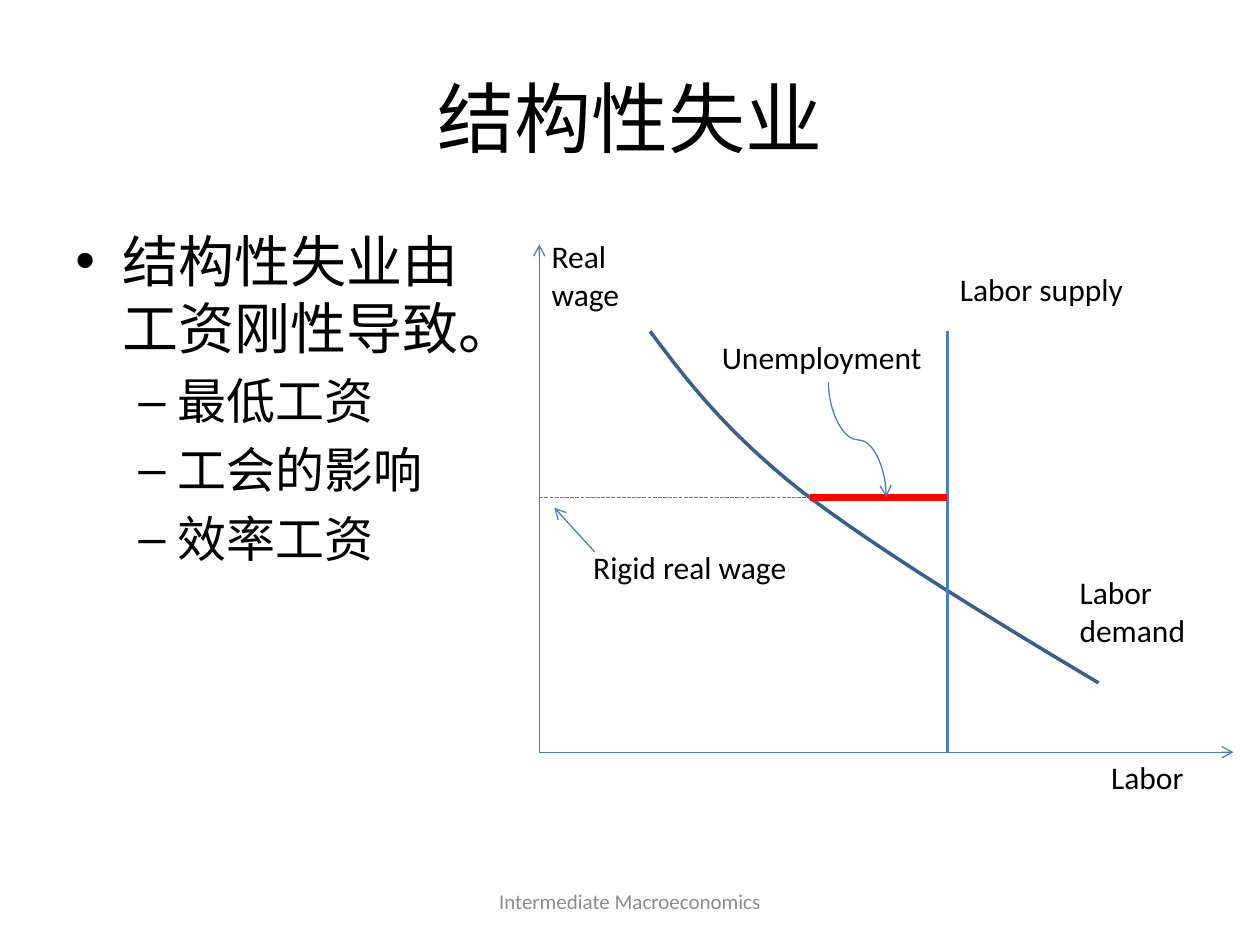
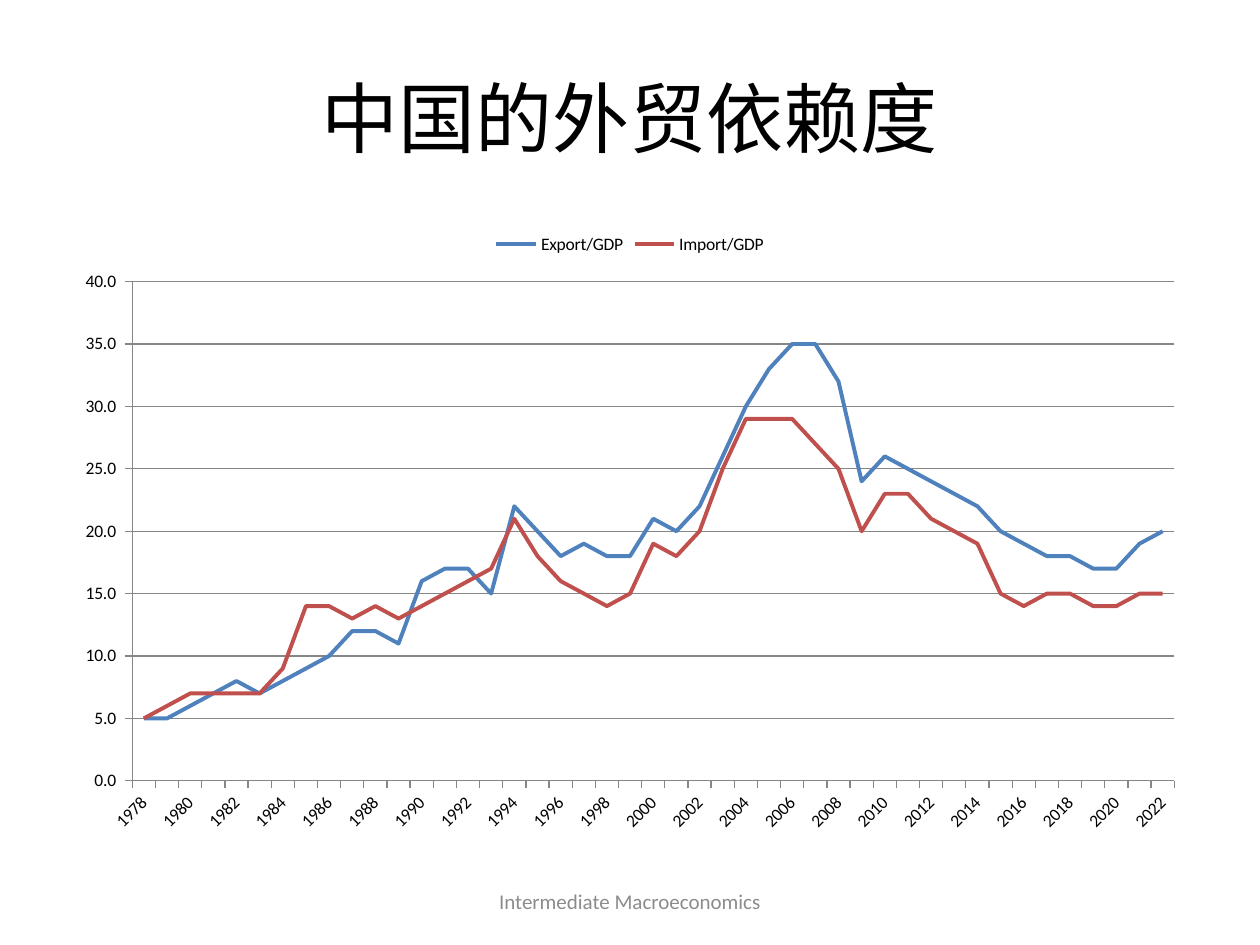
from dataclasses import dataclass

from lxml import etree
from pptx import Presentation
from pptx import util as u
from pptx.chart.data import CategoryChartData
from pptx.dml.color import RGBColor
from pptx.enum import chart as charts
from pptx.enum import dml, shapes, text
from pptx.oxml.ns import qn

PX = 9144  # EMU in one px, 100 px to the inch
FONT = "Calibri"
COLORS = {
    "text": "000000",
    "footer": "8C8C8C",
    "axis": "4B7EBC",
    "demand": "3A5F8C",
    "unemployment": "FF0000",
    "export": "4F81BD",
    "import": "C0504D",
    "grid": "868686",
}

Point = tuple[int, int]
Box = tuple[int, int, int, int]

TITLE_BOX: Box = (50, 30, 900, 125)
FOOTER_BOX: Box = (342, 695, 316, 40)
FOOTER = "Intermediate Macroeconomics"


@dataclass(frozen=True)
class Bullet:
    words: str
    mark: str
    size: int
    margin: int
    hanging: int
    level: int = 0


@dataclass(frozen=True)
class Stroke:
    start: Point
    end: Point
    color: str = "axis"
    width: float = 0.75
    arrow: bool = False
    dashed: bool = False
    rotation: int = 0
    kind: shapes.MSO_CONNECTOR = shapes.MSO_CONNECTOR.STRAIGHT


@dataclass(frozen=True)
class Label:
    words: str
    box: Box


CAUSES = [Bullet("结构性失业由工资刚性导致。", "•", 32, 37, 37)] + [
    Bullet(cause, "–", 28, 81, 31, level=1)
    for cause in ("最低工资", "工会的影响", "效率工资")
]

# Corners and levels of the labor market diagram
ORIGIN: Point = (428, 597)
SUPPLY_X, SUPPLY_TOP = 752, 263
RIGID_WAGE_Y = 395

DEMAND_START: Point = (516, 263)
DEMAND_CURVES = [
    ((546, 303), (576, 342), (635, 389)),
    ((695, 435), (783, 489), (872, 542)),
]
STROKES = [
    Stroke(ORIGIN, (979, ORIGIN[1]), arrow=True),
    Stroke(ORIGIN, (ORIGIN[0], 194), arrow=True),
    Stroke((ORIGIN[0], RIGID_WAGE_Y), (SUPPLY_X, RIGID_WAGE_Y), dashed=True),
    Stroke((SUPPLY_X, SUPPLY_TOP), (SUPPLY_X, ORIGIN[1]), width=2),
    Stroke((643, RIGID_WAGE_Y), (SUPPLY_X, RIGID_WAGE_Y), "unemployment", 4),
    Stroke((726, 326), (635, 372), arrow=True, rotation=270,
           kind=shapes.MSO_CONNECTOR.CURVE),
    Stroke((472, 438), (440, 403), arrow=True),
]
LABELS = [
    Label("Unemployment", (563, 263, 189, 40)),
    Label("Rigid real wage", (461, 430, 220, 40)),
    Label("Labor demand", (847, 450, 133, 71)),
    Label("Labor supply", (752, 209, 161, 40)),
    Label("Labor", (872, 597, 128, 40)),
    Label("Real wage", (428, 183, 115, 71)),
]

YEARS = [str(year) for year in range(1978, 2023)]
EXPORT_SHARE = [
    5, 5, 6, 7, 8, 7, 8, 9, 10, 12, 12, 11, 16, 17, 17,
    15, 22, 20, 18, 19, 18, 18, 21, 20, 22, 26, 30, 33, 35, 35,
    32, 24, 26, 25, 24, 23, 22, 20, 19, 18, 18, 17, 17, 19, 20,
]
IMPORT_SHARE = [
    5, 6, 7, 7, 7, 7, 9, 14, 14, 13, 14, 13, 14, 15, 16,
    17, 21, 18, 16, 15, 14, 15, 19, 18, 20, 25, 29, 29, 29, 27,
    25, 20, 23, 23, 21, 20, 19, 15, 14, 15, 15, 14, 14, 15, 15,
]


def emu(lengths) -> list[int]:
    return [round(length * PX) for length in lengths]


def rgb(color: str) -> RGBColor:
    return RGBColor.from_string(COLORS[color])


def write(paragraph, words: str, *, size: int = 18, color: str = "text",
          align=text.PP_ALIGN.LEFT) -> None:
    paragraph.alignment = align
    run = paragraph.add_run()
    run.text = words
    run.font.name = FONT
    run.font.size = u.Pt(size)
    run.font.color.rgb = rgb(color)


def add_frame(slide, box: Box, anchor=text.MSO_ANCHOR.TOP):
    """Add a wrapping text box and return its text frame."""
    frame = slide.shapes.add_textbox(*emu(box)).text_frame
    frame.word_wrap = True
    frame.vertical_anchor = anchor
    return frame


def add_titled_slide(deck, heading: str):
    """Add a slide with the shared title and footer."""
    slide = deck.slides.add_slide(deck.slide_layouts.get_by_name("Title Only"))
    title = slide.shapes.title
    title.left, title.top, title.width, title.height = emu(TITLE_BOX)
    title.text_frame.vertical_anchor = text.MSO_ANCHOR.MIDDLE
    write(title.text_frame.paragraphs[0], heading, size=44,
          align=text.PP_ALIGN.CENTER)
    footer = add_frame(slide, FOOTER_BOX, text.MSO_ANCHOR.MIDDLE)
    write(footer.paragraphs[0], FOOTER, size=12, color="footer",
          align=text.PP_ALIGN.CENTER)
    return slide


def add_bullets(slide, box: Box, bullets: list[Bullet]) -> None:
    frame = add_frame(slide, box)
    for index, bullet in enumerate(bullets):
        paragraph = frame.add_paragraph() if index else frame.paragraphs[0]
        write(paragraph, bullet.words, size=bullet.size)
        paragraph.level = bullet.level
        paragraph.space_before = u.Pt(bullet.size * 0.2)
        properties = paragraph._p.get_or_add_pPr()
        properties.set("marL", str(bullet.margin * PX))
        properties.set("indent", str(-bullet.hanging * PX))
        etree.SubElement(properties, qn("a:buFont"), typeface="Arial")
        etree.SubElement(properties, qn("a:buChar"), char=bullet.mark)


def add_stroke(slide, stroke: Stroke) -> None:
    connector = slide.shapes.add_connector(
        stroke.kind, *emu(stroke.start), *emu(stroke.end))
    connector.line.color.rgb = rgb(stroke.color)
    connector.line.width = u.Pt(stroke.width)
    if stroke.dashed:
        connector.line.dash_style = dml.MSO_LINE.SQUARE_DOT
    properties = connector.element.spPr
    if stroke.arrow:
        etree.SubElement(properties.find(qn("a:ln")), qn("a:tailEnd"), type="arrow")
    if stroke.rotation:
        properties.find(qn("a:xfrm")).set("rot", str(stroke.rotation * 60000))
    etree.SubElement(properties, qn("a:effectLst"))


def bezier(start: Point, first: Point, second: Point, end: Point, steps: int = 16):
    """Return points along a cubic curve, without its start."""
    points = []
    for step in range(1, steps + 1):
        t = step / steps
        weights = ((1 - t) ** 3, 3 * t * (1 - t) ** 2, 3 * t * t * (1 - t), t ** 3)
        points.append(tuple(
            sum(weight * place for weight, place in zip(weights, places))
            for places in zip(start, first, second, end)))
    return points


def add_demand(slide) -> None:
    points = [DEMAND_START]
    for first, second, end in DEMAND_CURVES:
        points += bezier(points[-1], first, second, end)
    outline = slide.shapes.build_freeform(*emu(points[0]))
    outline.add_line_segments([emu(point) for point in points[1:]], close=False)
    demand = outline.convert_to_shape()
    demand.shadow.inherit = False
    demand.fill.background()
    demand.line.color.rgb = rgb("demand")
    demand.line.width = u.Pt(2)


def add_trade_chart(slide, box: Box) -> None:
    shares = CategoryChartData(number_format="0.0_ ")
    shares.categories = YEARS
    shares.add_series("Export/GDP", EXPORT_SHARE)
    shares.add_series("Import/GDP", IMPORT_SHARE)
    chart = slide.shapes.add_chart(
        charts.XL_CHART_TYPE.LINE, *emu(box), shares).chart
    chart.has_title = False
    chart.font.name = FONT
    chart.font.size = u.Pt(10)
    chart.font.color.rgb = rgb("text")
    chart.has_legend = True
    chart.legend.position = charts.XL_LEGEND_POSITION.TOP
    chart.legend.include_in_layout = False

    plot = chart.plots[0]
    plot.vary_by_categories = False
    for series, color in zip(plot.series, ("export", "import")):
        series.smooth = False
        series.marker.style = charts.XL_MARKER_STYLE.NONE
        series.format.line.color.rgb = rgb(color)
        series.format.line.width = u.Pt(2.25)

    years, percent = chart.category_axis, chart.value_axis
    percent.minimum_scale, percent.maximum_scale, percent.major_unit = 0, 40, 5
    percent.has_major_gridlines = True
    percent.tick_labels.number_format = "0.0_ "
    percent.tick_labels.number_format_is_linked = False
    for axis in (years, percent):
        axis.major_tick_mark = charts.XL_TICK_MARK.OUTSIDE
        axis.minor_tick_mark = charts.XL_TICK_MARK.NONE
        axis.format.line.color.rgb = rgb("grid")
        axis.tick_labels.font.size = u.Pt(10)
    percent.major_gridlines.format.line.color.rgb = rgb("grid")
    years_body = years._element.find(qn("c:txPr")).find(qn("a:bodyPr"))
    years_body.set("rot", str(-45 * 60000))
    years_body.set("vert", "horz")


def main() -> None:
    deck = Presentation()
    deck.slide_width, deck.slide_height = emu((1000, 750))

    unemployment = add_titled_slide(deck, "结构性失业")
    add_bullets(unemployment, (50, 175, 348, 495), CAUSES)
    add_demand(unemployment)
    for stroke in STROKES:
        add_stroke(unemployment, stroke)
    for label in LABELS:
        write(add_frame(unemployment, label.box).paragraphs[0], label.words)

    trade = add_titled_slide(deck, "中国的外贸依赖度")
    add_trade_chart(trade, (50, 175, 900, 495))

    deck.save("out.pptx")


if __name__ == "__main__":
    main()
